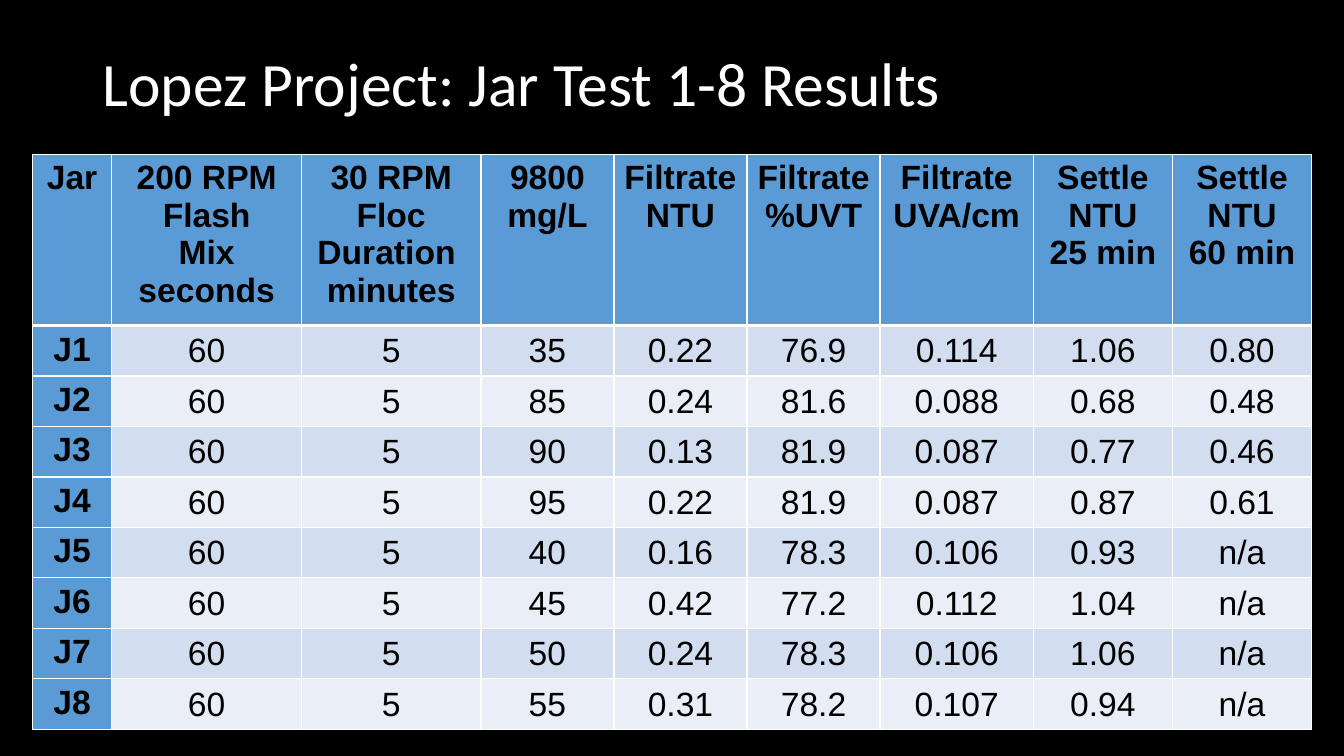
from pptx import Presentation
from pptx.dml.color import RGBColor
from pptx.enum.text import MSO_ANCHOR as Anchor, PP_ALIGN as Align
from pptx.oxml import parse_xml
from pptx.oxml.ns import nsdecls
from pptx.util import Inches, Pt

WIDTH, HEIGHT = 13.33, 7.5
BLACK, WHITE, BLUE = "000000", "FFFFFF", "5B9BD5"
BANDS = ["D2DEEF", "EAEFF7"]
COLS = [0.79, 1.88, 1.78, 1.32, 1.32, 1.32, 1.52, 1.38, 1.38]
HEAD_ROW, BODY_ROW = 1.59, 0.47
FLASH, FLOC = "60", "5"  # the same for every jar

HEADS = [
    "Jar", "200 RPM\nFlash\nMix\nseconds", "30 RPM\nFloc\nDuration \nminutes",
    "9800\nmg/L", "Filtrate\nNTU", "Filtrate\n%UVT", "Filtrate\nUVA/cm",
    "Settle\nNTU\n25 min", "Settle\nNTU\n60 min",
]
RESULTS = [
    ["35", "0.22", "76.9", "0.114", "1.06", "0.80"],
    ["85", "0.24", "81.6", "0.088", "0.68", "0.48"],
    ["90", "0.13", "81.9", "0.087", "0.77", "0.46"],
    ["95", "0.22", "81.9", "0.087", "0.87", "0.61"],
    ["40", "0.16", "78.3", "0.106", "0.93", "n/a"],
    ["45", "0.42", "77.2", "0.112", "1.04", "n/a"],
    ["50", "0.24", "78.3", "0.106", "1.06", "n/a"],
    ["55", "0.31", "78.2", "0.107", "0.94", "n/a"],
]


def paint(fill, color):
    fill.solid()
    fill.fore_color.rgb = RGBColor.from_string(color)


def style(para, face, size, color, bold=False):
    font = para.font
    font.name, font.size, font.bold = face, Pt(size), bold
    font.color.rgb = RGBColor.from_string(color)


def add_title(slide, text):
    box = slide.shapes.add_textbox(
        Inches(0.92), Inches(0.13), Inches(11.5), Inches(1.45))
    frame = box.text_frame
    frame.word_wrap = True
    frame.vertical_anchor = Anchor.MIDDLE
    frame.text = text
    para = frame.paragraphs[0]
    para.line_spacing = 0.9
    style(para, "Calibri", 44, WHITE)


def edge(cell, top, bottom):
    """Draw white borders; top and bottom are widths in points."""
    props = cell._tc.get_or_add_tcPr()
    for side, width in zip("LRTB", (1, 1, top, bottom)):
        props.append(parse_xml(
            f'<a:ln{side} {nsdecls("a")} w="{Pt(width)}"><a:solidFill>'
            f'<a:srgbClr val="{WHITE}"/></a:solidFill></a:ln{side}>'))


def set_cell(cell, text, row, col):
    head, label = row == 0, row == 0 or col == 0
    edge(cell, 3 if row == 1 else 1, 3 if head else 1)
    paint(cell.fill, BLUE if label else BANDS[(row - 1) % 2])
    cell.margin_left = cell.margin_right = Inches(0.05 if label else 0.01)
    if not label:
        cell.vertical_anchor = Anchor.MIDDLE
        cell.margin_top, cell.margin_bottom = Inches(0.01), 0
    cell.text = text
    for para in cell.text_frame.paragraphs:
        para.alignment = Align.CENTER
        style(para, "Arial", 24, BLACK, label)


def add_grid(slide, rows):
    high = HEAD_ROW + BODY_ROW * (len(rows) - 1)
    table = slide.shapes.add_table(
        len(rows), len(COLS), Inches(0.32), Inches(1.53),
        Inches(sum(COLS)), Inches(high)).table
    table.first_col = True
    for col, width in zip(table.columns, COLS):
        col.width = Inches(width)
    for r, texts in enumerate(rows):
        table.rows[r].height = Inches(BODY_ROW if r else HEAD_ROW)
        for c, text in enumerate(texts):
            set_cell(table.cell(r, c), text, r, c)


def main():
    deck = Presentation()
    deck.slide_width, deck.slide_height = Inches(WIDTH), Inches(HEIGHT)
    slide = deck.slides.add_slide(deck.slide_layouts[6])
    paint(slide.background.fill, BLACK)
    add_title(slide, "Lopez Project: Jar Test 1-8 Results")
    jars = [[f"J{n}", FLASH, FLOC, *vals] for n, vals in enumerate(RESULTS, 1)]
    add_grid(slide, [HEADS, *jars])
    deck.save("out.pptx")


if __name__ == "__main__":
    main()
